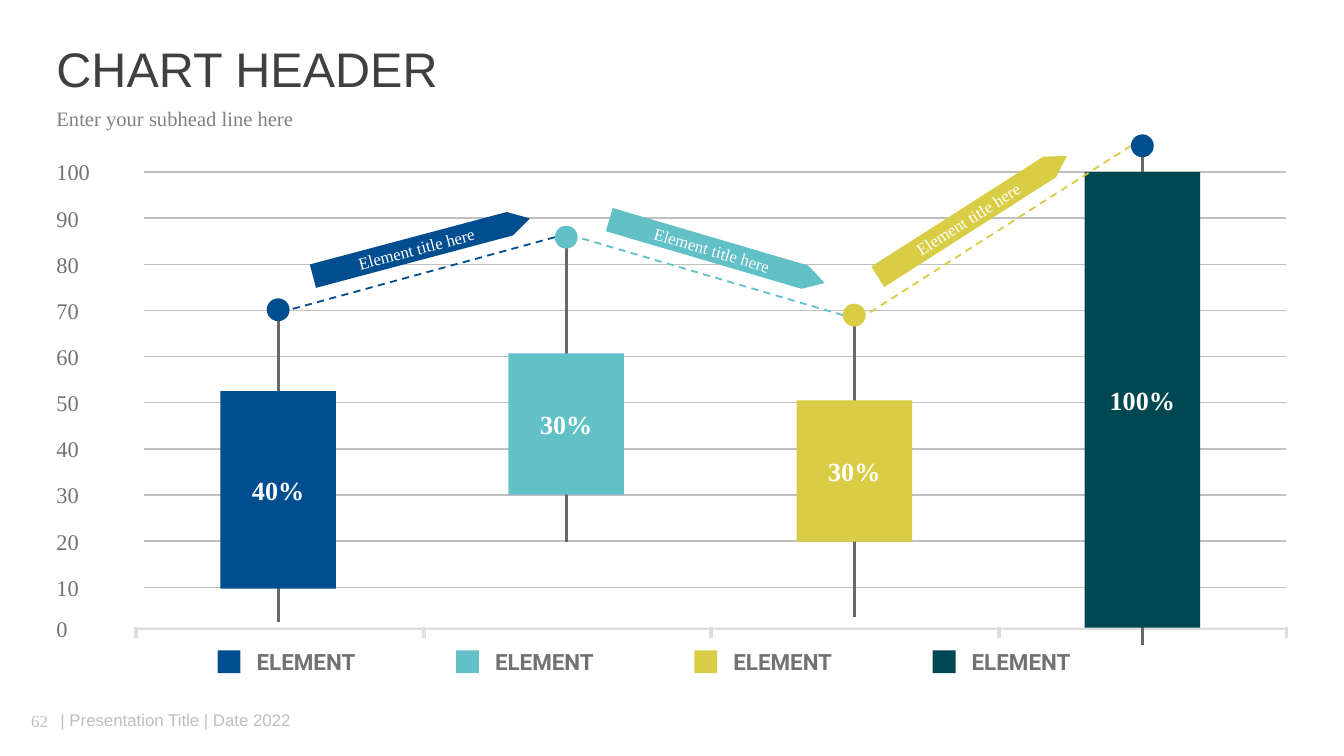
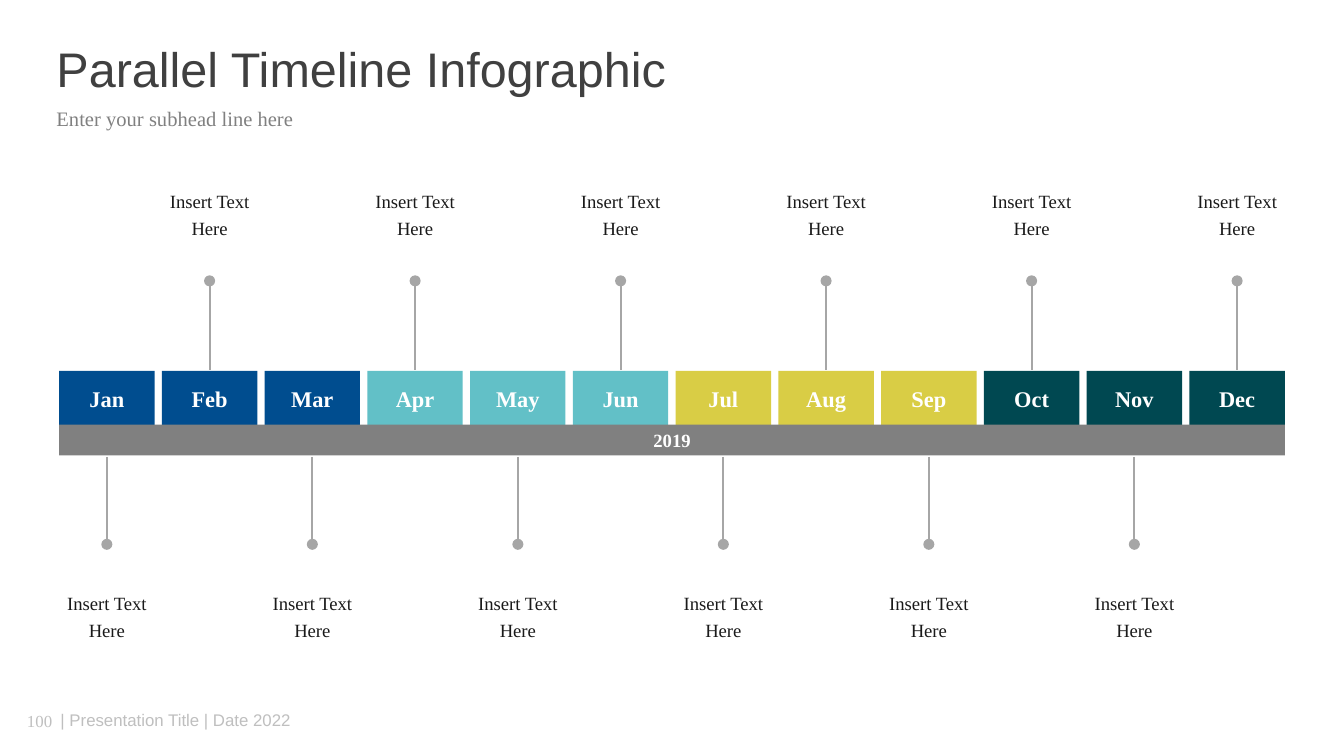
from lxml.etree import SubElement
from pptx import Presentation
from pptx.dml.color import RGBColor
from pptx.enum.dml import MSO_LINE
from pptx.enum.shapes import MSO_CONNECTOR, MSO_SHAPE
from pptx.enum.text import MSO_ANCHOR, MSO_AUTO_SIZE, PP_ALIGN
from pptx.oxml.ns import qn
from pptx.util import Emu, Pt

EMU_PER_PX = 9144  # 100 px to the inch
PAGE_WIDTH = 1000
MARGIN = 42
CONTENT_WIDTH = 915
SERIF, SANS, LEGEND_FONT = "Times New Roman", "Arial", "Roboto"

COLORS = {
    "navy": "004D8F",
    "teal": "62C0C7",
    "yellow": "D9CD45",
    "green": "004851",
    "white": "FFFFFF",
    "title": "404040",
    "subhead": "808080",
    "footer": "BFBFBF",
    "grid": "BFBFBF",
    "axis": "DEDEDE",
    "label": "727272",
    "stem": "686868",
    "pin": "A6A6A6",
    "ink": "1A1A1A",
    "band": "808080",
}
SERIES = ["navy", "teal", "yellow", "green"]


def px(length):
    return Emu(round(length * EMU_PER_PX))


def rgb(name):
    return RGBColor.from_string(COLORS[name])


class Deck:
    def __init__(self):
        self.deck = Presentation()
        self.deck.slide_width = px(PAGE_WIDTH)
        self.deck.slide_height = Emu(px(PAGE_WIDTH) * 9 // 16)
        self.page = None

    def add_page(self, title, number):
        """Start a slide with the shared title, subhead and footer."""
        self.page = self.deck.slides.add_slide(self.deck.slide_layouts[5])
        self.text(8, 521, 43, 30, str(number), 9, "footer", align=PP_ALIGN.CENTER)
        self.text(45, 528, 200, 15, "| Presentation Title | Date 2022", 9, "footer", font=SANS)
        self.text(MARGIN, 80, CONTENT_WIDTH, 19, "Enter your subhead line here",
                  11, "subhead", spacing=0.9)
        holder = self.page.shapes.title
        holder.left, holder.top = px(MARGIN), px(31)
        holder.width, holder.height = px(CONTENT_WIDTH), px(45)
        self.fill_text(holder, title, 26, "title", font=SANS, spacing=0.9)

    def fill_text(self, shape, text, size, color, font=SERIF, bold=False,
                  align=PP_ALIGN.LEFT, spacing=1.0, inset=0):
        frame = shape.text_frame
        frame.word_wrap = True
        frame.auto_size = MSO_AUTO_SIZE.NONE
        frame.vertical_anchor = MSO_ANCHOR.MIDDLE
        frame.margin_left = frame.margin_right = px(inset)
        frame.margin_top = frame.margin_bottom = 0
        para = frame.paragraphs[0]
        para.text = text
        para.alignment = align
        para.line_spacing = spacing
        para.font.name = font
        para.font.size = Pt(size)
        para.font.bold = bold
        para.font.color.rgb = rgb(color)

    def text(self, left, top, width, height, text, size, color, **style):
        box = self.page.shapes.add_textbox(px(left), px(top), px(width), px(height))
        self.fill_text(box, text, size, color, **style)

    def paint(self, shape, fill, outline=None):
        """Give a flat fill, with a hairline of the same colour if asked for."""
        shape.shadow.inherit = False
        shape.fill.solid()
        shape.fill.fore_color.rgb = rgb(fill)
        if outline:
            shape.line.color.rgb = rgb(fill)
            shape.line.width = Pt(outline)
        else:
            shape.line.fill.background()

    def shape(self, left, top, width, height, fill, kind=MSO_SHAPE.RECTANGLE, outline=None):
        shape = self.page.shapes.add_shape(kind, px(left), px(top), px(width), px(height))
        self.paint(shape, fill, outline)
        return shape

    def ticks(self, lefts, top, width, height, fill):
        """Draw all axis ticks as one outline of small rectangles."""
        builder = None
        for left in lefts:
            x1, x2, y1, y2 = px(left), px(left + width), px(top), px(top + height)
            if builder is None:
                builder = self.page.shapes.build_freeform(x1, y1)
            else:
                builder.move_to(x1, y1)
            builder.add_line_segments([(x2, y1), (x2, y2), (x1, y2)], close=True)
        self.paint(builder.convert_to_shape(), fill, 0.13)

    def line(self, x1, y1, x2, y2, color, width, dashed=False, oval_end=False):
        line = self.page.shapes.add_connector(
            MSO_CONNECTOR.STRAIGHT, px(x1), px(y1), px(x2), px(y2))
        line.line.color.rgb = rgb(color)
        line.line.width = Pt(width)
        if dashed:
            line.line.dash_style = MSO_LINE.DASH
        properties = line._element.spPr
        if oval_end:
            SubElement(properties.find(qn("a:ln")), qn("a:tailEnd"), type="oval")
        SubElement(properties, qn("a:effectLst"))


def draw_axes(deck):
    grid_step = (437 - 128) / 9
    levels = [437 - grid_step * index for index in range(10)]
    for y in levels:
        deck.line(107, y, 957, y, "grid", 0.75)
    for index, y in enumerate([468] + levels):
        deck.text(MARGIN, y - 10, 54, 20, str(index * 10), 12, "label")
    deck.ticks([100 + 214 * index for index in range(5)], 467, 2, 7, "axis")
    deck.shape(100, 467, 856, 1, "axis", outline=0.13)


def draw_legend(deck):
    for index, color in enumerate(SERIES):
        left = 162 + index * 532 / 3
        deck.text(left + 29, 482, 170, 20, "ELEMENT", 12, "label", font=LEGEND_FONT, bold=True)
        deck.shape(left, 484, 17, 17, color)


def chart_page(deck):
    deck.add_page("CHART HEADER", 62)
    draw_axes(deck)
    draw_legend(deck)

    bar_width, dot = 86, 17
    centers = [207 + index * 643 / 3 for index in range(4)]
    stems = [(237, 463), (177, 403), (233, 459), (110, 480)]
    bars = [(291, 147, "40%"), (263, 105, "30%"), (298, 105, "30%"), (128, 339, "100%")]
    dot_tops = [222, 168, 226, 100]
    for x, (top, bottom) in zip(centers, stems):
        deck.line(x, top, x, bottom, "stem", 1.5)
    for x, color, (top, height, share) in zip(centers, SERIES, bars):
        deck.shape(x - bar_width / 2, top, bar_width, height, color)
        deck.text(x - 42, top + height / 2 - 12, 84, 24, share, 14, "white",
                  bold=True, align=PP_ALIGN.CENTER)
    for x, top, color in zip(centers, dot_tops, SERIES[:3] + ["navy"]):
        deck.shape(x - dot / 2, top, dot, dot, color, MSO_SHAPE.OVAL)

    arrows = [(230, 175, 345.1), (450, 178, 16.4), (640, 152, 327.4)]
    for index, (left, top, angle) in enumerate(arrows):
        color = SERIES[index]
        deck.line(centers[index + 1] - dot / 2, dot_tops[index + 1] + dot / 2,
                  centers[index] + dot / 2, dot_tops[index] + dot / 2,
                  color, 0.95, dashed=True)
        arrow = deck.shape(left, top, 167, 18, color, MSO_SHAPE.PENTAGON)
        arrow.adjustments[0] = 0.85
        arrow.rotation = angle
        deck.fill_text(arrow, "Element title here", 9, "white", align=PP_ALIGN.CENTER)


def timeline_page(deck):
    deck.add_page("Parallel Timeline Infographic", 100)
    months = "Jan Feb Mar Apr May Jun Jul Aug Sep Oct Nov Dec".split()
    month_width = 71
    for index, month in enumerate(months):
        left = 44 + index * 841 / 11
        center = left + month_width / 2
        if index % 2:
            pin_start, pin_end, text_top = 275, 209, 127
        else:
            pin_start, pin_end, text_top = 340, 405, 426
        deck.text(center - 45.5, text_top, 91, 62, "Insert Text Here", 10, "ink",
                  align=PP_ALIGN.CENTER, spacing=1.2, inset=10)
        deck.line(center, pin_start, center, pin_end, "pin", 1, oval_end=True)
        block = deck.shape(left, 276, month_width, 41, SERIES[index // 3])
        deck.fill_text(block, month, 12, "white", bold=True, align=PP_ALIGN.CENTER)
    band = deck.shape(44, 316, 912, 23, "band")
    deck.fill_text(band, "2019", 10, "white", bold=True, align=PP_ALIGN.CENTER)


def main():
    deck = Deck()
    chart_page(deck)
    timeline_page(deck)
    deck.deck.save("out.pptx")


if __name__ == "__main__":
    main()
